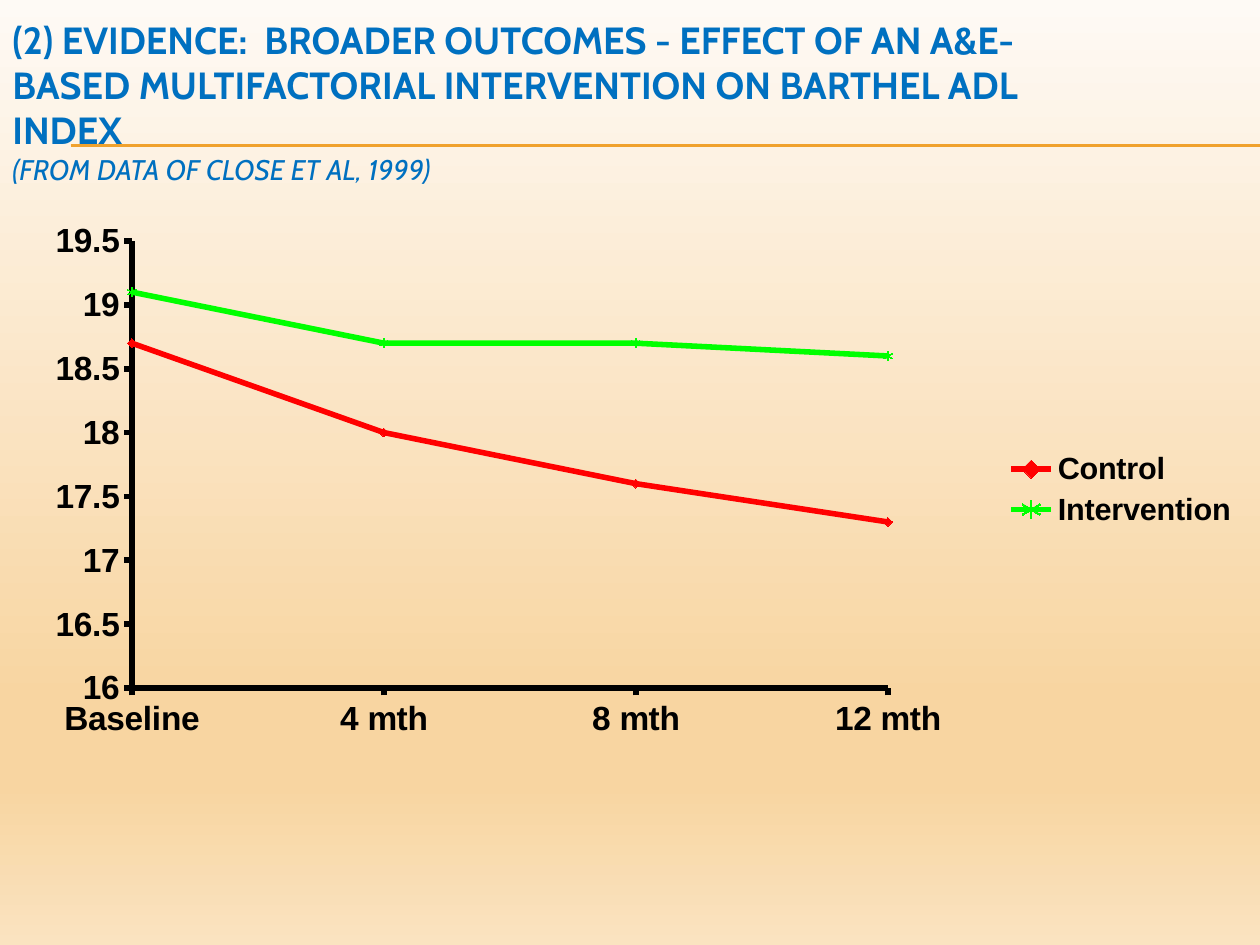
import pptx
import pptx.chart.data
import pptx.dml.color
import pptx.enum.chart
import pptx.enum.shapes
import pptx.enum.text
import pptx.oxml.ns
import pptx.util
from lxml import etree

RGB = pptx.dml.color.RGBColor
Inches = pptx.util.Inches
Pt = pptx.util.Pt
qn = pptx.oxml.ns.qn
Mark = pptx.enum.chart.XL_MARKER_STYLE

BLACK = RGB(0x00, 0x00, 0x00)
BLUE = RGB(0x00, 0x70, 0xC0)
GOLD = RGB(0xF0, 0xA2, 0x2E)
RED = RGB(0xFF, 0x00, 0x00)
GREEN = RGB(0x00, 0xFF, 0x00)
CREAM = RGB(0xFE, 0xFA, 0xF5)
SAND = RGB(0xF8, 0xD5, 0xA1)
PALE = RGB(0xFA, 0xE3, 0xC0)


def assign(item, values):
    for name, value in values.items():
        setattr(item, name, value)


def add(parent, tag, **values):
    return etree.SubElement(parent, qn(tag), values)


class Deck:
    head = "Cabin"
    body = "Arial"
    thick = 3.18

    def __init__(self, width, height):
        self.show = pptx.Presentation()
        assign(self.show, {"slide_width": Inches(width), "slide_height": Inches(height)})
        self.slide = self.show.slides.add_slide(self.show.slide_layouts[6])

    def shade(self, stops):
        fill = self.slide.background.fill
        fill.gradient()
        grad = self.slide.background._cSld.find(".//" + qn("a:gradFill"))
        for child in list(grad):
            grad.remove(child)
        group = add(grad, "a:gsLst")
        for place, color in stops:
            stop = add(group, "a:gs", pos=str(place * 1000))
            add(stop, "a:srgbClr", val=str(color))
        add(grad, "a:lin", ang="5400000", scaled="0")

    def stroke(self, line, color, width):
        line.color.rgb = color
        line.width = Pt(width)

    def rule(self, left, right, top):
        kind = pptx.enum.shapes.MSO_CONNECTOR.STRAIGHT
        line = self.slide.shapes.add_connector(
            kind, Inches(left), Inches(top), Inches(right), Inches(top))
        self.stroke(line.line, GOLD, 0.75)
        add(line._element.spPr, "a:effectLst")

    def font(self, font, color, **values):
        assign(font, values)
        font.color.rgb = color

    def title(self, box, main, source):
        frame = self.slide.shapes.add_textbox(*map(Inches, box)).text_frame
        assign(frame, {"word_wrap": True,
                       "vertical_anchor": pptx.enum.text.MSO_ANCHOR.MIDDLE})
        para = frame.paragraphs[0]
        for text, size, bold in ((main, 21.6, True), (source, 16.2, False)):
            if para.runs:
                para.add_line_break()
            run = para.add_run()
            run.text = text
            self.font(run.font, BLUE, name=self.head, size=Pt(size),
                      bold=bold, italic=not bold)

    def axis(self, axis, values):
        assign(axis, {"has_major_gridlines": False,
                      "major_tick_mark": pptx.enum.chart.XL_TICK_MARK.OUTSIDE,
                      **values})
        self.stroke(axis.format.line, BLACK, self.thick)
        self.font(axis.tick_labels.font, BLACK, name=self.body, size=Pt(19.1), bold=True)

    def chart(self, box, plot, cats, rows):
        data = pptx.chart.data.CategoryChartData()
        data.categories = cats
        for name, values, color, mark in rows:
            data.add_series(name, values)
        kind = pptx.enum.chart.XL_CHART_TYPE.LINE_MARKERS
        chart = self.slide.shapes.add_chart(kind, *map(Inches, box), data).chart
        assign(chart, {"has_title": False, "has_legend": True})
        self.font(chart.font, BLACK, name=self.body, size=Pt(19.1), bold=True)
        assign(chart.legend, {"include_in_layout": False,
                              "position": pptx.enum.chart.XL_LEGEND_POSITION.RIGHT})
        self.font(chart.legend.font, BLACK, name=self.body, size=Pt(17.5), bold=True)
        self.axis(chart.category_axis, {})
        self.axis(chart.value_axis,
                  {"minimum_scale": 16, "maximum_scale": 19.5, "major_unit": 0.5})
        assign(chart.value_axis.tick_labels,
               {"number_format": "General", "number_format_is_linked": False})
        chart.plots[0].vary_by_categories = False
        for line, (name, values, color, mark) in zip(chart.plots[0].series, rows):
            line.smooth = False
            self.stroke(line.format.line, color, self.thick)
            assign(line.marker, {"style": mark, "size": 5})
            line.marker.format.fill.solid()
            line.marker.format.fill.fore_color.rgb = color
            line.marker.format.line.color.rgb = color
        self.place(chart, plot)

    def place(self, chart, plot):
        area = chart._chartSpace.find(".//" + qn("c:plotArea"))
        scale = area.find(qn("c:valAx"))
        cross = add(scale, "c:crossBetween", val="midCat")
        scale.find(qn("c:majorUnit")).addprevious(cross)
        for old in area.findall(qn("c:layout")):
            area.remove(old)
        outer = add(area, "c:layout")
        area.insert(0, outer)
        inner = add(outer, "c:manualLayout")
        add(inner, "c:layoutTarget", val="inner")
        for key in "xy":
            add(inner, f"c:{key}Mode", val="edge")
        for key, value in zip("xywh", plot):
            add(inner, f"c:{key}", val=str(value))

    def save(self):
        self.show.save("out.pptx")


def main():
    deck = Deck(10, 7.5)
    deck.shade([(0, CREAM), (74, SAND), (83, SAND), (100, PALE)])
    for top in (1.15, 1.16):
        deck.rule(0.56, 10, top)
    deck.title((0, 0.18, 8.92, 1.25),
               "(2) EVIDENCE:  BROADER OUTCOMES - EFFECT OF AN A&E-BASED "
               "MULTIFACTORIAL INTERVENTION ON BARTHEL ADL INDEX ",
               "(FROM DATA OF CLOSE ET AL, 1999)")
    deck.chart((0.06, 1.56, 9.87, 4.65), (0.1, 0.076, 0.608, 0.763),
               ["Baseline", "4 mth", "8 mth", "12 mth"],
               [("Control", (18.7, 18, 17.6, 17.3), RED, Mark.DIAMOND),
                ("Intervention", (19.1, 18.7, 18.7, 18.6), GREEN, Mark.STAR)])
    deck.save()


if __name__ == "__main__":
    main()
